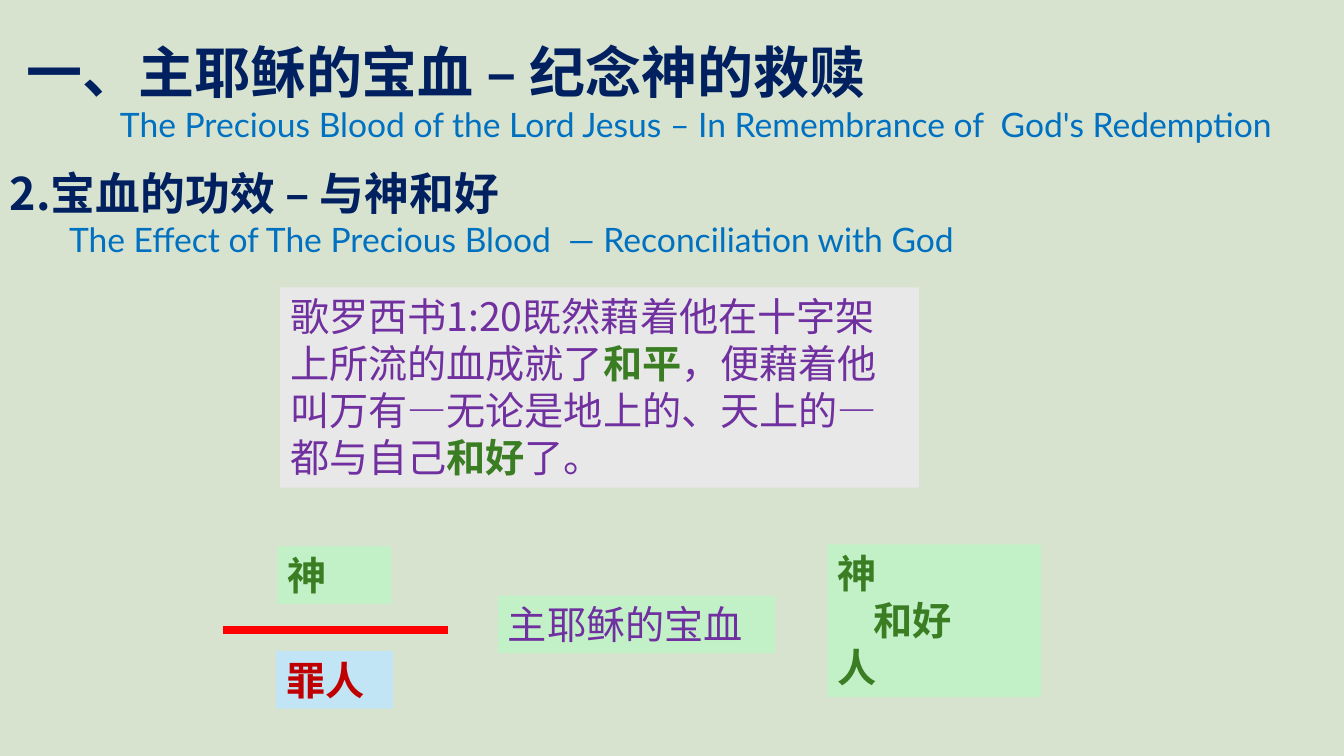
from lxml import etree
from pptx import Presentation
from pptx.dml.color import RGBColor
from pptx.enum.shapes import MSO_CONNECTOR, MSO_SHAPE
from pptx.enum.text import MSO_ANCHOR, MSO_AUTO_SIZE, PP_ALIGN
from pptx.oxml.ns import qn
from pptx.util import Cm, Pt

RECTANGLE = MSO_SHAPE.RECTANGLE
STRAIGHT = MSO_CONNECTOR.STRAIGHT
TOP = MSO_ANCHOR.TOP
NO_AUTOFIT = MSO_AUTO_SIZE.NONE
LEFT = PP_ALIGN.LEFT

CHINESE_FONT = "Noto Sans CJK SC"
ENGLISH_FONT = "Lato"
LINE_HEIGHT = 1.2

SAGE = RGBColor(0xD8, 0xE3, 0xCF)
NAVY = RGBColor(0x00, 0x20, 0x60)
BLUE = RGBColor(0x00, 0x70, 0xC0)
PURPLE = RGBColor(0x70, 0x30, 0xA0)
GREEN = RGBColor(0x3B, 0x7D, 0x23)
DARK_RED = RGBColor(0xC0, 0x00, 0x00)
RED = RGBColor(0xFF, 0x00, 0x00)
MINT = RGBColor(0xC2, 0xF1, 0xC8)
GREY = RGBColor(0xE8, 0xE8, 0xE8)
SKY = RGBColor(0xC1, 0xE5, 0xF5)


def place(shape, left, top, width, height):
    shape.left, shape.top = Cm(left), Cm(top)
    shape.width, shape.height = Cm(width), Cm(height)


def prepare_frame(frame):
    frame.word_wrap = True
    frame.auto_size = NO_AUTOFIT
    frame.vertical_anchor = TOP


def format_span(span, size, color, bold=False, font=CHINESE_FONT):
    span.font.name = font
    span.font.size = Pt(size)
    span.font.bold = bold
    span.font.color.rgb = color
    east_asian = etree.SubElement(span.font._element, qn("a:ea"))
    east_asian.set("typeface", font)


def format_paragraph(para, size, indent=0):
    para.alignment = LEFT
    para.line_spacing = Pt(round(size * LINE_HEIGHT, 1))
    if indent:
        properties = para._p.get_or_add_pPr()
        properties.set("marL", str(Cm(indent)))
        properties.set("indent", "0")


def write_heading(frame, chinese, size, english, indent):
    """Write a bold Chinese line with its indented English translation."""
    prepare_frame(frame)
    frame.text = f"{chinese}\n{english}"
    first, second = frame.paragraphs
    format_paragraph(first, size)
    format_span(first.runs[0], size, NAVY, bold=True)
    format_paragraph(second, 24, indent)
    format_span(second.runs[0], 24, BLUE, font=ENGLISH_FONT)


def add_box(slide, position, fill):
    box = slide.shapes.add_shape(RECTANGLE, *map(Cm, position))
    box.shadow.inherit = False
    box.fill.solid()
    box.fill.fore_color.rgb = fill
    box.line.fill.background()
    prepare_frame(box.text_frame)
    return box


def add_label(slide, position, fill, text, color, bold=True):
    box = add_box(slide, position, fill)
    box.text_frame.text = text
    for para in box.text_frame.paragraphs:
        format_paragraph(para, 28)
        format_span(para.runs[0], 28, color, bold)
    return box


def add_verse(slide, position, spans):
    """Add the scripture box; spans pair each text with its emphasis."""
    para = add_box(slide, position, GREY).text_frame.paragraphs[0]
    format_paragraph(para, 28)
    for text, emphasized in spans:
        span = para.add_run()
        span.text = text
        format_span(span, 28, GREEN if emphasized else PURPLE, emphasized)


def add_barrier(slide, left, right, height):
    line = slide.shapes.add_connector(
        STRAIGHT, Cm(left), Cm(height), Cm(right), Cm(height))
    line.line.color.rgb = RED
    line.line.width = Pt(6)
    etree.SubElement(line._element.spPr, qn("a:effectLst"))


def main():
    deck = Presentation()
    deck.slide_width, deck.slide_height = Cm(33.87), Cm(19.05)
    slide = deck.slides.add_slide(deck.slide_layouts[5])
    slide.background.fill.solid()
    slide.background.fill.fore_color.rgb = SAGE

    title = slide.shapes.title
    place(title, 0.41, 0.81, 32.99, 3)
    write_heading(
        title.text_frame, "一、主耶稣的宝血 – 纪念神的救赎", 40,
        "The Precious Blood of the Lord Jesus – In Remembrance of  God's Redemption",
        2.36)

    subtitle = slide.shapes.add_textbox(Cm(0), Cm(4.04), Cm(33.87), Cm(2.64))
    write_heading(
        subtitle.text_frame, "2.宝血的功效 – 与神和好", 32,
        "The Effect of The Precious Blood  — Reconciliation with God", 1.49)

    add_verse(slide, (7.06, 7.24, 16.1, 5.05), [
        ("歌罗西书1:20既然藉着他在十字架上所流的血成就了", False),
        ("和平", True),
        ("，便藉着他叫万有―无论是地上的、天上的―都与自己", False),
        ("和好", True),
        ("了。", False),
    ])

    add_label(slide, (6.99, 13.77, 2.87, 1.45), MINT, "神", GREEN)
    add_barrier(slide, 5.61, 11.28, 15.87)
    add_label(slide, (6.96, 16.41, 2.95, 1.45), SKY, "罪人", DARK_RED)
    add_label(slide, (12.55, 15.01, 6.99, 1.45), MINT, "主耶稣的宝血", PURPLE,
              bold=False)
    reconciled = add_label(slide, (20.85, 13.72, 5.38, 3.84), MINT,
                           "神\n和好\n人", GREEN)
    format_paragraph(reconciled.text_frame.paragraphs[1], 28, indent=0.92)

    deck.save("out.pptx")


if __name__ == "__main__":
    main()
